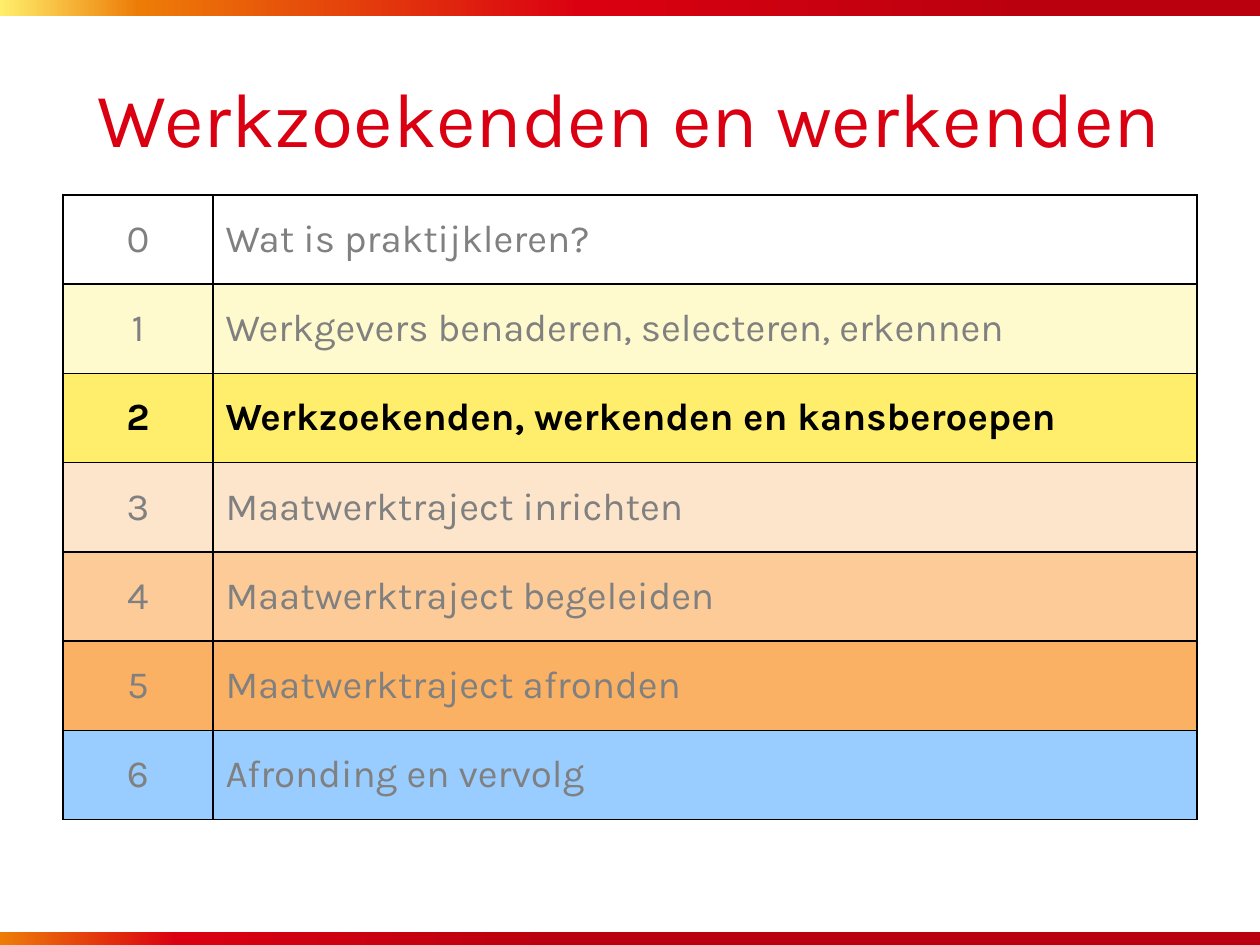
import dataclasses

import lxml.etree
import pptx
import pptx.dml.color
import pptx.enum.shapes
import pptx.enum.text
import pptx.oxml.ns
import pptx.shapes.autoshape
import pptx.slide
import pptx.table
import pptx.text.text
import pptx.util

EMU_PER_PX = 914400 / 126
FONT = "Karla"
COLORS = {
    "dark red": "BA000E",
    "red": "DA0011",
    "orange": "ED7C07",
    "yellow": "FFEE6B",
    "white": "FFFFFF",
    "pale yellow": "FFF9CE",
    "pale orange": "FDE5CB",
    "light orange": "FCCB98",
    "soft orange": "FAB164",
    "blue": "99CCFF",
    "gray": "808080",
    "black": "000000",
}


@dataclasses.dataclass(frozen=True)
class Bar:
    top: int
    stops: tuple[tuple[int, str], ...]  # percent from the left, color


@dataclasses.dataclass(frozen=True)
class Chapter:
    title: str
    fill: str
    current: bool = False


BARS = (
    Bar(0, ((0, "yellow"), (11, "orange"), (46, "red"), (82, "dark red"))),
    Bar(932, ((0, "orange"), (14, "red"), (44, "dark red"))),
)
CHAPTERS = (
    Chapter("Wat is praktijkleren?", "white"),
    Chapter("Werkgevers benaderen, selecteren, erkennen", "pale yellow"),
    Chapter("Werkzoekenden, werkenden en kansberoepen", "yellow", True),
    Chapter("Maatwerktraject inrichten", "pale orange"),
    Chapter("Maatwerktraject begeleiden", "light orange"),
    Chapter("Maatwerktraject afronden", "soft orange"),
    Chapter("Afronding en vervolg", "blue"),
)


def px(length: float) -> pptx.util.Emu:
    return pptx.util.Emu(round(length * EMU_PER_PX))


def rgb(name: str) -> pptx.dml.color.RGBColor:
    return pptx.dml.color.RGBColor.from_string(COLORS[name])


def add_child(parent, tag: str, **attributes: str):
    return lxml.etree.SubElement(parent, pptx.oxml.ns.qn(tag), attributes)


def add_run(paragraph, text: str, size: int, color: str, bold: bool = False) -> None:
    run = paragraph.add_run()
    run.text = text
    run.font.name = FONT
    run.font.size = pptx.util.Pt(size)
    run.font.bold = bold
    run.font.color.rgb = rgb(color)


def add_bar(slide: pptx.slide.Slide, bar: Bar) -> None:
    shape = slide.shapes.add_shape(
        pptx.enum.shapes.MSO_SHAPE.RECTANGLE, 0, px(bar.top), px(1263), px(16)
    )
    shape.shadow.inherit = False
    shape.line.fill.background()
    shape.fill.gradient()
    shape.fill.gradient_angle = 0
    stop_list = next(shape._element.iter(pptx.oxml.ns.qn("a:gsLst")))
    for stop in list(stop_list):
        stop_list.remove(stop)
    for percent, color in bar.stops:
        stop = add_child(stop_list, "a:gs", pos=str(percent * 1000))
        add_child(stop, "a:srgbClr", val=COLORS[color])


def add_title(slide: pptx.slide.Slide, text: str) -> None:
    box = slide.shapes.add_textbox(px(63), px(38), px(1134), px(157))
    frame = box.text_frame
    frame.word_wrap = True
    frame.vertical_anchor = pptx.enum.text.MSO_ANCHOR.MIDDLE
    paragraph = frame.paragraphs[0]
    paragraph.alignment = pptx.enum.text.PP_ALIGN.CENTER
    add_run(paragraph, text, 44, "red")


def style_cell(cell: pptx.table._Cell, fill: str) -> None:
    properties = cell._tc.get_or_add_tcPr()
    for side in ("a:lnL", "a:lnR", "a:lnT", "a:lnB"):
        line = add_child(properties, side, w=str(pptx.util.Pt(1)))
        add_child(add_child(line, "a:solidFill"), "a:srgbClr", val=COLORS["black"])
    cell.fill.solid()
    cell.fill.fore_color.rgb = rgb(fill)
    cell.vertical_anchor = pptx.enum.text.MSO_ANCHOR.MIDDLE


def add_chapter_table(slide: pptx.slide.Slide, chapters: tuple[Chapter, ...]) -> None:
    height = 625
    table = slide.shapes.add_table(
        len(chapters), 2, px(63), px(195), px(1134), px(height)
    ).table
    table.first_row = False
    table.horz_banding = False
    for column, width in zip(table.columns, (150, 984)):
        column.width = px(width)
    alignments = (pptx.enum.text.PP_ALIGN.CENTER, pptx.enum.text.PP_ALIGN.LEFT)
    for number, chapter in enumerate(chapters):
        table.rows[number].height = px(height / len(chapters))
        color = "black" if chapter.current else "gray"
        for column, text in enumerate((str(number), chapter.title)):
            cell = table.cell(number, column)
            style_cell(cell, chapter.fill)
            paragraph = cell.text_frame.paragraphs[0]
            paragraph.alignment = alignments[column]
            add_run(paragraph, text, 22, color, chapter.current)


def main() -> None:
    presentation = pptx.Presentation()
    presentation.slide_width = px(1260)
    presentation.slide_height = px(945)
    slide = presentation.slides.add_slide(presentation.slide_layouts[6])

    # Gradient bars along the top and bottom edges
    for bar in BARS:
        add_bar(slide, bar)

    # Title and chapter overview
    add_title(slide, "Werkzoekenden en werkenden")
    add_chapter_table(slide, CHAPTERS)

    presentation.save("out.pptx")


if __name__ == "__main__":
    main()
